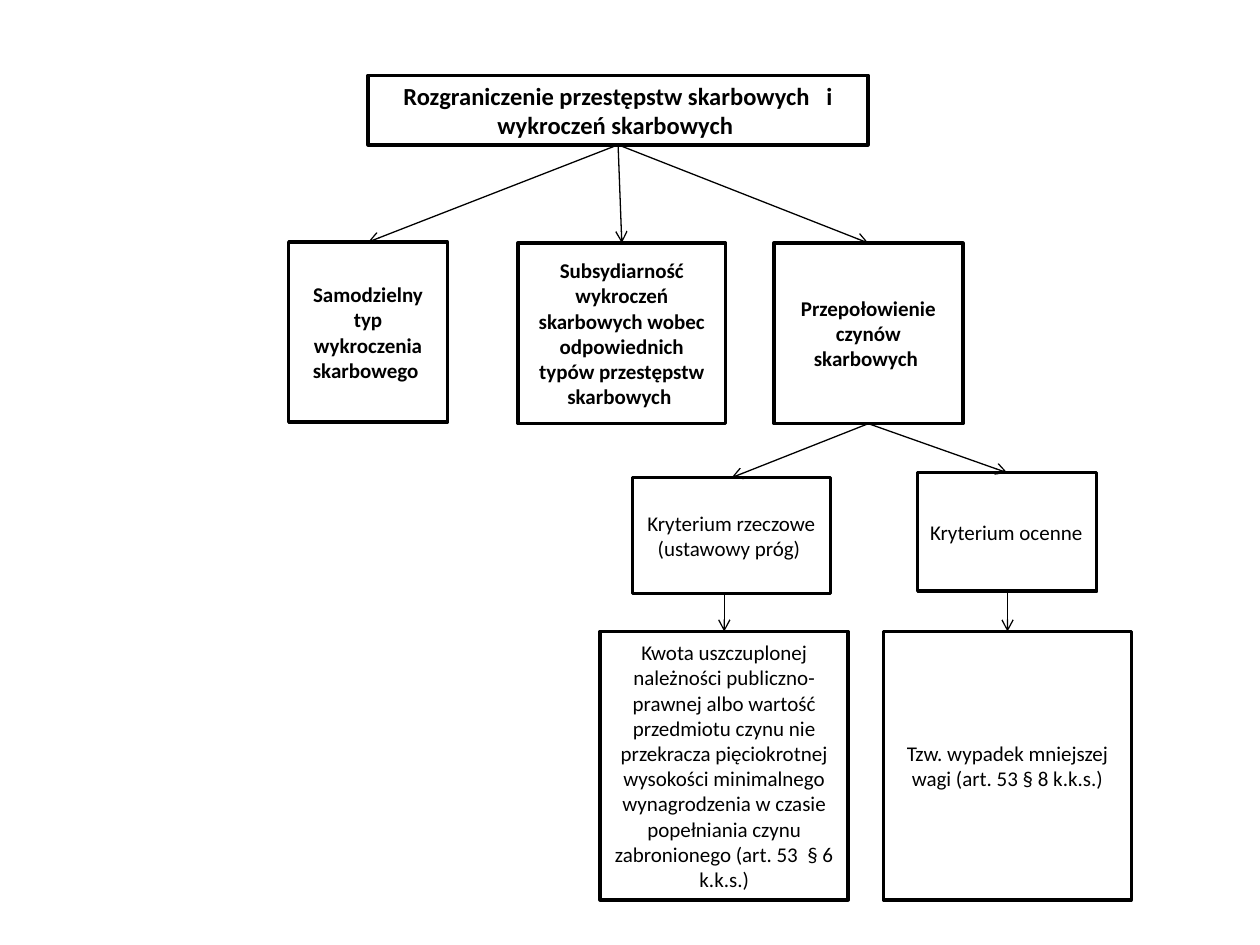
from dataclasses import dataclass

from lxml import etree
from pptx import Presentation
from pptx.dml.color import RGBColor
from pptx.enum.shapes import MSO_CONNECTOR, MSO_SHAPE
from pptx.enum.text import MSO_ANCHOR, PP_ALIGN
from pptx.oxml.ns import qn
from pptx.util import Cm, Pt

RECTANGLE = MSO_SHAPE.RECTANGLE
STRAIGHT = MSO_CONNECTOR.STRAIGHT
MIDDLE = MSO_ANCHOR.MIDDLE
LEFT, CENTER = PP_ALIGN.LEFT, PP_ALIGN.CENTER
TOP_SIDE, BOTTOM_SIDE = 0, 2
BLACK, WHITE = "000000", "FFFFFF"
FONT = "Calibri"


@dataclass
class Box:
    text: str
    left: float
    top: float
    width: float
    height: float
    size: int = 12
    bold: bool = False
    filled: bool = True
    align: PP_ALIGN = CENTER


def color(value: str) -> RGBColor:
    return RGBColor.from_string(value)


def draw_box(slide, box: Box):
    shape = slide.shapes.add_shape(
        RECTANGLE, Cm(box.left), Cm(box.top), Cm(box.width), Cm(box.height))
    shape.shadow.inherit = False
    if box.filled:
        shape.fill.solid()
        shape.fill.fore_color.rgb = color(WHITE)
    else:
        shape.fill.background()
    shape.line.color.rgb = color(BLACK)
    shape.line.width = Pt(2)
    frame = shape.text_frame
    frame.word_wrap = True
    frame.vertical_anchor = MIDDLE
    frame.text = box.text
    for paragraph in frame.paragraphs:
        paragraph.alignment = box.align
        for run in paragraph.runs:
            run.font.name = FONT
            run.font.size = Pt(box.size)
            run.font.bold = box.bold
            run.font.color.rgb = color(BLACK)
    return shape


def draw_arrow(slide, parent, child, vertical: bool = False) -> None:
    """Arrow from the parent's bottom to the middle of the child's top."""
    x = child.left + child.width // 2
    arrow = slide.shapes.add_connector(
        STRAIGHT, x, parent.top + parent.height, x, child.top)
    if not vertical:
        arrow.begin_connect(parent, BOTTOM_SIDE)
    arrow.end_connect(child, TOP_SIDE)
    arrow.line.color.rgb = color(BLACK)
    arrow.line.width = Pt(0.75)
    etree.SubElement(arrow.line._get_or_add_ln(), qn("a:tailEnd"), type="arrow")
    etree.SubElement(arrow._element.spPr, qn("a:effectLst"))


# Levels of the diagram
TITLE = Box("Rozgraniczenie przestępstw skarbowych   i wykroczeń skarbowych ",
            7.42, 1.52, 10.08, 1.4, size=14, bold=True, filled=False)
METHODS = [
    Box("Samodzielny typ wykroczenia skarbowego ",
        5.82, 4.88, 3.2, 3.63, bold=True, filled=False),
    Box("Subsydiarność wykroczeń skarbowych wobec odpowiednich "
        "typów przestępstw skarbowych ",
        10.44, 4.9, 4.19, 3.64, bold=True, filled=False),
    Box("Przepołowienie czynów skarbowych ",
        15.6, 4.9, 3.81, 3.64, bold=True),
]
CRITERIA = [
    Box("Kryterium rzeczowe\n(ustawowy próg) ", 12.75, 9.63, 3.99, 2.34),
    Box("Kryterium ocenne", 18.5, 9.53, 3.61, 2.39, align=LEFT),
]
DETAILS = [
    Box("Kwota uszczuplonej należności publiczno- prawnej albo wartość "
        "przedmiotu czynu nie przekracza pięciokrotnej wysokości minimalnego "
        "wynagrodzenia w czasie popełniania czynu zabronionego "
        "(art. 53  § 6 k.k.s.)", 12.1, 12.73, 5, 5.41),
    Box("Tzw. wypadek mniejszej wagi (art. 53 § 8 k.k.s.)",
        17.81, 12.73, 5, 5.41),
]


def main() -> None:
    presentation = Presentation()
    presentation.slide_width, presentation.slide_height = Cm(25.4), Cm(19.05)
    slide = presentation.slides.add_slide(presentation.slide_layouts[6])

    # Boxes
    title = draw_box(slide, TITLE)
    methods, criteria, details = (
        [draw_box(slide, box) for box in level]
        for level in (METHODS, CRITERIA, DETAILS))

    # Arrows
    for method in methods:
        draw_arrow(slide, title, method)
    splitting = methods[-1]
    for criterion, detail in zip(criteria, details):
        draw_arrow(slide, splitting, criterion)
        draw_arrow(slide, criterion, detail, vertical=True)

    presentation.save("out.pptx")


if __name__ == "__main__":
    main()
